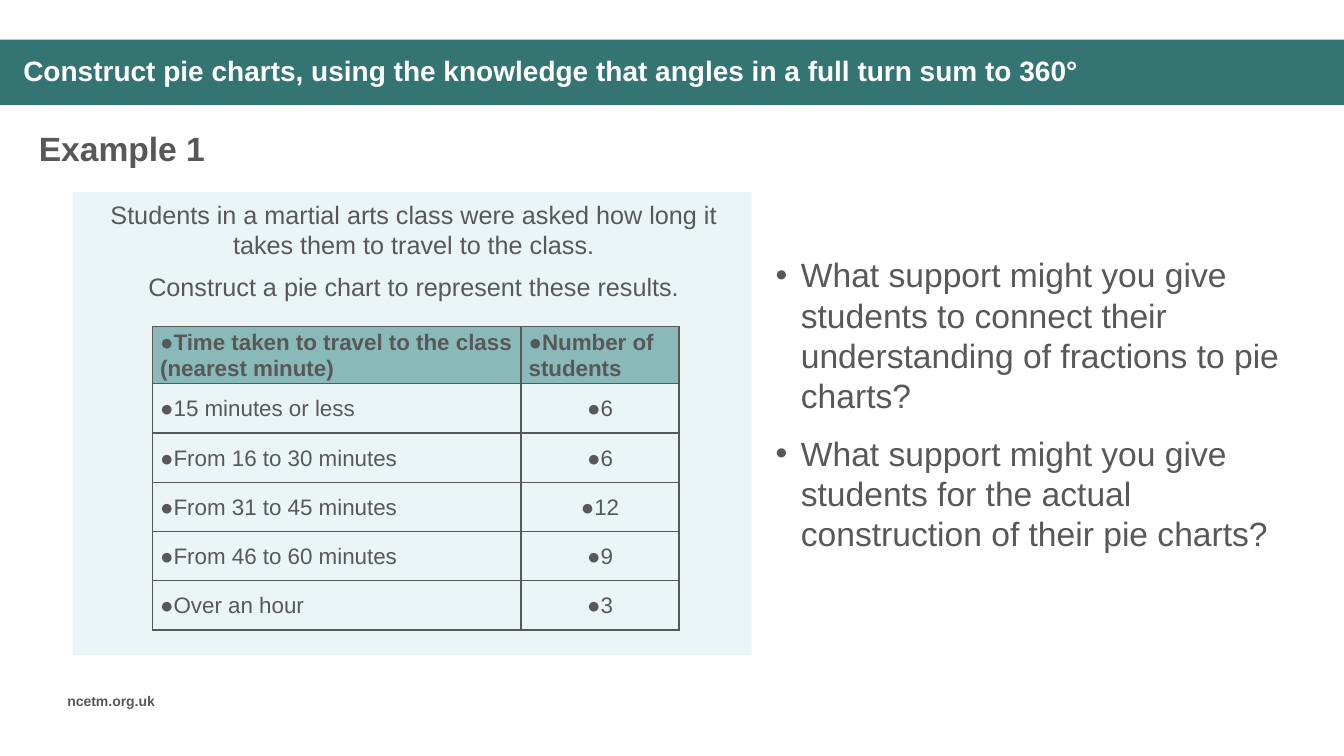
from lxml import etree
from pptx import Presentation
from pptx.dml.color import RGBColor
from pptx.enum.shapes import MSO_SHAPE
from pptx.enum.text import MSO_ANCHOR, MSO_AUTO_SIZE, PP_ALIGN
from pptx.oxml import parse_xml
from pptx.oxml.ns import nsdecls, qn
from pptx.util import Pt

TEAL = RGBColor(0x34, 0x75, 0x74)
HEADER = RGBColor(0x8A, 0xB9, 0xB9)
PANEL = RGBColor(0xEB, 0xF5, 0xF5)
GREY = RGBColor(0x58, 0x58, 0x58)
WHITE = RGBColor(0xFF, 0xFF, 0xFF)

TRAVEL_TIMES = [
    ("Time taken to travel to the class (nearest minute)", "Number of students"),
    ("15 minutes or less", "6"),
    ("From 16 to 30 minutes", "6"),
    ("From 31 to 45 minutes", "12"),
    ("From 46 to 60 minutes", "9"),
    ("Over an hour", "3"),
]
PROBLEM = [
    "Students in a martial arts class were asked how long it takes them to travel to the class.",
    "Construct a pie chart to represent these results.",
]
QUESTIONS = [
    "What support might you give students to connect their understanding of fractions to pie charts?",
    "What support might you give students for the actual construction of their pie charts?",
]


def set_attrs(obj, values):
    for name, value in values.items():
        setattr(obj, name, value)


def add_bullet(p, char, margin=0, indent=0):
    pPr = p._p.get_or_add_pPr()
    pPr.set("marL", str(Pt(margin)))
    pPr.set("indent", str(Pt(indent)))
    etree.SubElement(pPr, qn("a:buFont")).set("typeface", "Arial")
    etree.SubElement(pPr, qn("a:buChar")).set("char", char)


def write(tf, lines, size, bold=False, color=GREY, bullet=None, **para):
    for i, line in enumerate(lines):
        p = tf.paragraphs[0] if i == 0 else tf.add_paragraph()
        if bullet:
            add_bullet(p, *bullet)
        set_attrs(p, para)
        r = p.add_run()
        r.text = line
        set_attrs(r.font, {"name": "Arial", "size": Pt(size), "bold": bold})
        r.font.color.rgb = color


def add_text(s, box, lines, size, anchor=MSO_ANCHOR.TOP, **fmt):
    tf = s.shapes.add_textbox(*map(Pt, box)).text_frame
    set_attrs(tf, {"word_wrap": True, "vertical_anchor": anchor})
    write(tf, lines, size, **fmt)


def add_block(s, box, color):
    sp = s.shapes.add_shape(MSO_SHAPE.RECTANGLE, *map(Pt, box))
    sp.shadow.inherit = False
    sp.fill.solid()
    sp.fill.fore_color.rgb = color
    sp.line.fill.background()


def add_title(s, box):
    x, y, w, h = box
    add_block(s, box, TEAL)
    title = s.shapes.title
    set_attrs(title, {"left": Pt(x + 9.4), "top": Pt(y + 6.5), "width": Pt(w - 73), "height": Pt(h - 13)})
    s.shapes._spTree.append(title._element)
    tf = title.text_frame
    set_attrs(tf, {"word_wrap": True, "auto_size": MSO_AUTO_SIZE.NONE, "vertical_anchor": MSO_ANCHOR.MIDDLE})
    write(tf, ["Construct pie charts, using the knowledge that angles in a full turn sum to 360°"],
          20, True, WHITE, alignment=PP_ALIGN.LEFT, line_spacing=0.9)


def format_cell(cell, fill):
    set_attrs(cell, {"vertical_anchor": MSO_ANCHOR.MIDDLE, "margin_left": Pt(5.4),
                     "margin_right": Pt(5.4), "margin_top": 0, "margin_bottom": 0})
    tcPr = cell._tc.get_or_add_tcPr()
    for side in "LRTB":
        tcPr.append(parse_xml(
            f'<a:ln{side} w="{Pt(1)}" {nsdecls("a")}><a:solidFill>'
            f'<a:srgbClr val="{GREY}"/></a:solidFill></a:ln{side}>'))
    if fill:
        cell.fill.solid()
        cell.fill.fore_color.rgb = fill
    else:
        cell.fill.background()


def add_travel_table(s, box):
    x, y, w, h = box
    head = 41
    row_height = (h - head) / (len(TRAVEL_TIMES) - 1)
    table = s.shapes.add_table(len(TRAVEL_TIMES), 2, *map(Pt, box)).table
    set_attrs(table, {"first_row": False, "horz_banding": False})
    for col, share in zip(table.columns, (0.7, 0.3)):
        col.width = Pt(w * share)
    for i, row in enumerate(TRAVEL_TIMES):
        table.rows[i].height = Pt(row_height if i else head)
        for j, text in enumerate(row):
            cell = table.cell(i, j)
            format_cell(cell, None if i else HEADER)
            write(cell.text_frame, [text], 16, i == 0, bullet=("●",), line_spacing=1.07,
                  alignment=PP_ALIGN.CENTER if i and j else PP_ALIGN.LEFT)


def add_problem(s, box):
    x, y, w, h = box
    add_block(s, box, PANEL)
    add_text(s, (x + 2, y + 2, w - 2, 80), PROBLEM, 18,
             alignment=PP_ALIGN.CENTER, space_after=Pt(8))
    add_travel_table(s, (x + 57, y + 96, 376, 217))


def add_questions(s, box):
    add_text(s, box, QUESTIONS, 24, MSO_ANCHOR.MIDDLE,
             bullet=("•", 28, -18), space_after=Pt(12))


def main():
    prs = Presentation()
    set_attrs(prs, {"slide_width": Pt(960), "slide_height": Pt(540)})
    s = prs.slides.add_slide(prs.slide_layouts[5])
    add_title(s, (0, 28.3, 960, 46.8))
    add_text(s, (41, 491, 90, 20), ["ncetm.org.uk"], 10, bold=True)
    add_text(s, (20.6, 88, 480, 36), ["Example 1"], 24, bold=True)
    add_problem(s, (52, 137, 485, 331))
    add_questions(s, (537, 137, 385, 303))
    prs.save("out.pptx")


if __name__ == "__main__":
    main()
